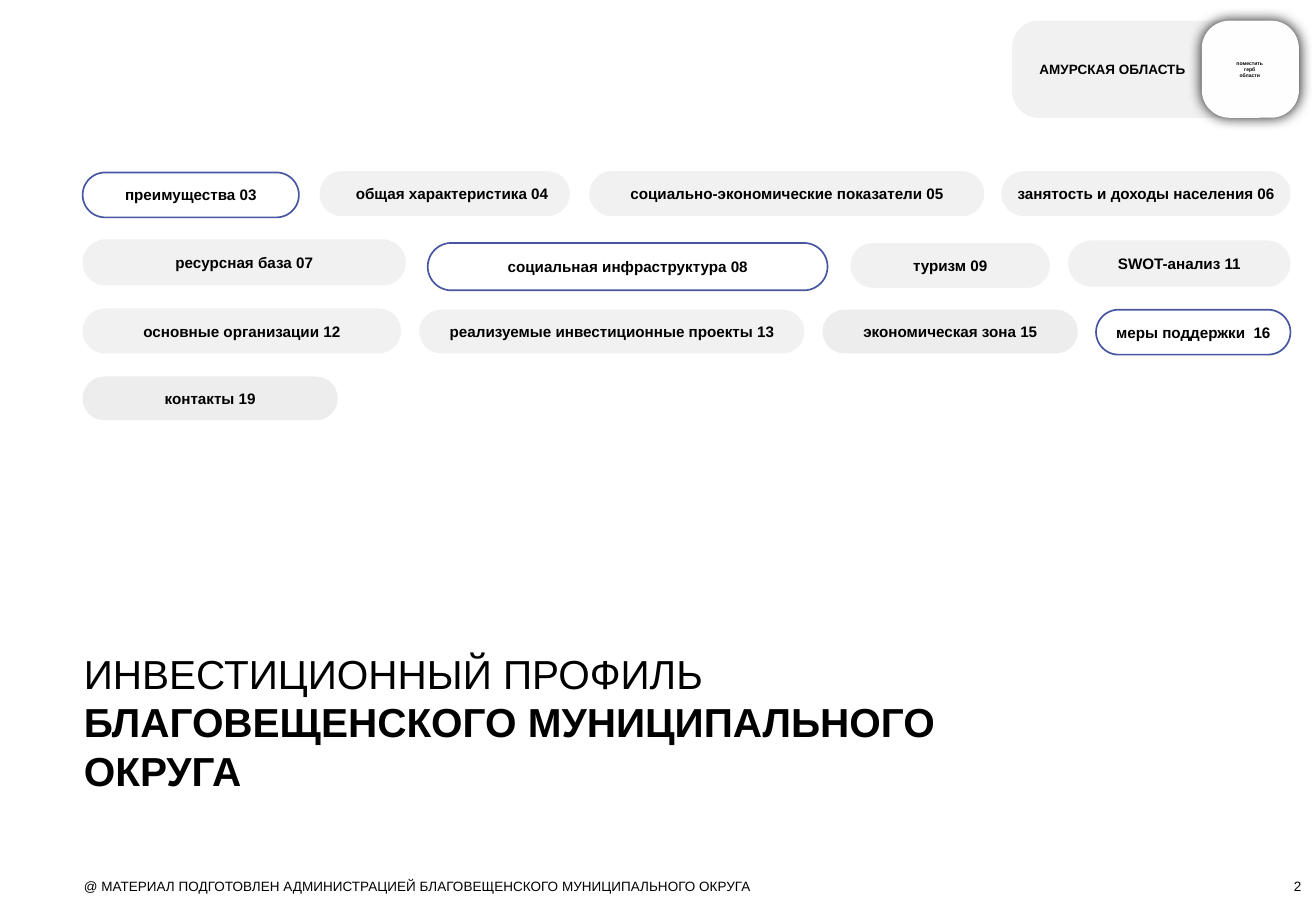
"""Builds the contents slide of a municipal investment profile."""
from lxml import etree
from pptx import Presentation
from pptx.dml.color import RGBColor
from pptx.enum.shapes import MSO_SHAPE
from pptx.enum.text import MSO_ANCHOR, PP_ALIGN
from pptx.oxml.ns import qn
from pptx.util import Inches, Pt

ROUND = MSO_SHAPE.ROUNDED_RECTANGLE
TOP, MIDDLE, BOTTOM = MSO_ANCHOR.TOP, MSO_ANCHOR.MIDDLE, MSO_ANCHOR.BOTTOM
LEFT, CENTER, RIGHT = PP_ALIGN.LEFT, PP_ALIGN.CENTER, PP_ALIGN.RIGHT

BLACK = RGBColor(0x00, 0x00, 0x00)
BLUE = RGBColor(0x47, 0x56, 0xA0)
GREY = RGBColor(0xF1, 0xF1, 0xF1)
DARK_GREY = RGBColor(0xED, 0xED, 0xED)
OFF_WHITE = RGBColor(0xFE, 0xFE, 0xFE)
FONT = "Arial"
NO_INSETS = (0, 0, 0, 0)

# (text, left, top, width, height, fill); a pill without fill is outlined
SECTIONS = [
    ("преимущества 03", 0.68, 1.42, 1.78, 0.37, None),
    ("общая характеристика 04", 2.63, 1.41, 2.06, 0.37, GREY),
    ("социально-экономические показатели 05", 4.85, 1.41, 3.25, 0.37, GREY),
    ("занятость и доходы населения 06", 8.24, 1.41, 2.38, 0.37, GREY),
    ("ресурсная база 07", 0.68, 1.97, 2.66, 0.38, GREY),
    ("социальная инфраструктура 08", 3.52, 2, 3.29, 0.39, None),
    ("туризм 09", 7, 2, 1.64, 0.37, GREY),
    ("SWOT-анализ 11", 8.79, 1.98, 1.83, 0.38, GREY),
    ("основные организации 12", 0.68, 2.54, 2.62, 0.37, GREY),
    ("реализуемые инвестиционные проекты 13", 3.45, 2.55, 3.17, 0.36, GREY),
    ("экономическая зона 15", 6.77, 2.55, 2.1, 0.36, DARK_GREY),
    ("меры поддержки  16", 9.02, 2.55, 1.6, 0.37, None),
    ("контакты 19", 0.68, 3.1, 2.1, 0.36, DARK_GREY),
]
INDENTED = "общая характеристика 04"
REGION = [("АМУРСКАЯ ОБЛАСТЬ", True)]
EMBLEM = [("поместить герб области", True)]
TITLE = [("ИНВЕСТИЦИОННЫЙ ПРОФИЛЬ ", False),
         ("БЛАГОВЕЩЕНСКОГО МУНИЦИПАЛЬНОГО ОКРУГА", True)]
FOOTER = [("@ МАТЕРИАЛ ПОДГОТОВЛЕН АДМИНИСТРАЦИЕЙ "
           "БЛАГОВЕЩЕНСКОГО МУНИЦИПАЛЬНОГО ОКРУГА", False)]
PAGE = [("2", False)]


def write(sp, runs, size, align=LEFT, anchor=TOP, insets=NO_INSETS):
    tf = sp.text_frame
    tf.word_wrap = True
    tf.vertical_anchor = anchor
    tf.margin_left, tf.margin_top, tf.margin_right, tf.margin_bottom = map(Inches, insets)
    p = tf.paragraphs[0]
    p.alignment = align
    for text, bold in runs:
        r = p.add_run()
        r.text = text
        r.font.name, r.font.size, r.font.bold = FONT, Pt(size), bold
        r.font.color.rgb = BLACK


def add_box(s, at, fill, radius):
    sp = s.shapes.add_shape(ROUND, *map(Inches, at))
    sp.adjustments[0] = radius
    sp.shadow.inherit = False
    if fill is None:
        sp.fill.background()
        sp.line.color.rgb = BLUE
        sp.line.width = Pt(1)
    else:
        sp.fill.solid()
        sp.fill.fore_color.rgb = fill
        sp.line.fill.background()
    return sp


def add_text(s, at, runs, size, align=LEFT, anchor=TOP):
    write(s.shapes.add_textbox(*map(Inches, at)), runs, size, align, anchor)


def add_glow_shadow(sp, blur, opacity):
    effects = sp.element.spPr.find(qn("a:effectLst"))
    shadow = etree.SubElement(effects, qn("a:outerShdw"), blurRad=str(Pt(blur)),
                              dist="0", dir="0", algn="ctr", rotWithShape="0")
    color = etree.SubElement(shadow, qn("a:srgbClr"), val=str(BLACK))
    etree.SubElement(color, qn("a:alpha"), val=str(opacity * 1000))


def main():
    prs = Presentation()
    prs.slide_width, prs.slide_height = Inches(10.83), Inches(7.5)
    s = prs.slides.add_slide(prs.slide_layouts[6])

    for text, left, top, width, height, fill in SECTIONS:
        pill = add_box(s, (left, top, width, height), fill, 0.5)
        insets = (0.12, 0, 0, 0) if text == INDENTED else NO_INSETS
        write(pill, [(text, True)], 9, CENTER, MIDDLE, insets)

    add_text(s, (9.91, 7.23, 0.8, 0.13), PAGE, 8, RIGHT, BOTTOM)
    add_text(s, (0.69, 7.23, 8, 0.13), FOOTER, 8)
    add_text(s, (0.69, 5.34, 8, 1.21), TITLE, 24)

    region = add_box(s, (8.33, 0.17, 2.36, 0.8), GREY, 0.275)
    write(region, REGION, 8, LEFT, MIDDLE, (0.16, 0.05, 0.79, 0.05))
    emblem = add_box(s, (9.89, 0.17, 0.8, 0.8), OFF_WHITE, 0.286)
    add_glow_shadow(emblem, 8.4, 92)
    add_text(s, (10.16, 0.5, 0.25, 0.15), EMBLEM, 3, CENTER)

    prs.save("out.pptx")


if __name__ == "__main__":
    main()
